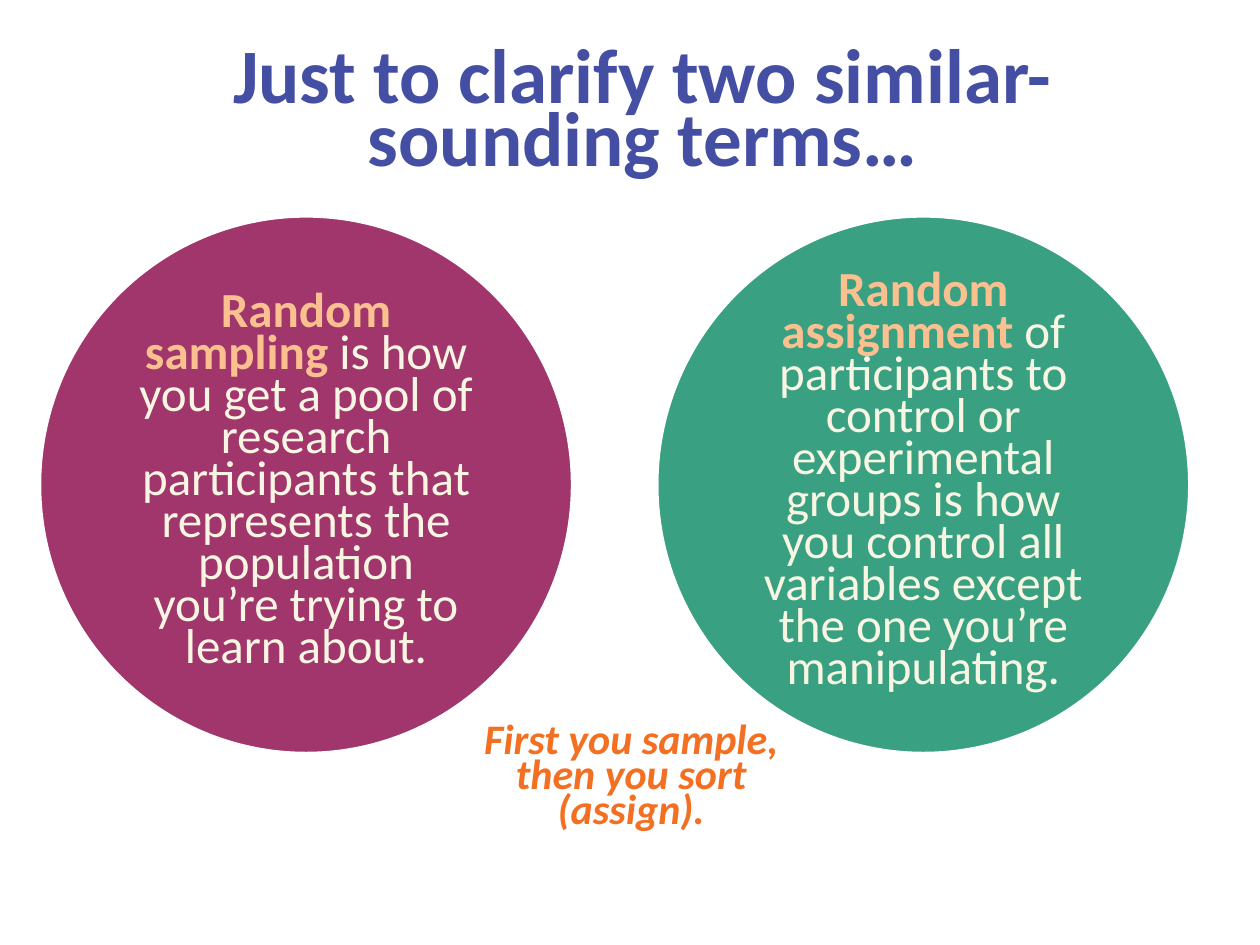
from pptx import Presentation
from pptx.dml.color import RGBColor
from pptx.enum import shapes, text
from pptx.util import Pt

COLORS = {
    "title": "444EA2",
    "summary": "F36F21",
    "term": "FAC090",
    "definition": "F8F6E3",
    "sampling": "A0366C",
    "assignment": "3AA082",
    "outline": "FFFFFF",
}


def rgb(name):
    return RGBColor.from_string(COLORS[name])


def style(paragraph, size, line_spacing):
    """Set what all the text on the slide shares: centring, font and leading."""
    paragraph.alignment = text.PP_ALIGN.CENTER
    paragraph.line_spacing = Pt(line_spacing)
    paragraph.font.name = "Calibri"
    paragraph.font.size = Pt(size)


prs = Presentation()
prs.slide_width, prs.slide_height = Pt(720), Pt(540)
slide = prs.slides.add_slide(prs.slide_layouts[5])

title = slide.shapes.title
title.left, title.top, title.width, title.height = Pt(69), Pt(23), Pt(597), Pt(90)
title.text_frame.text = "Just to clarify two similar-sounding terms…"
title.text_frame.vertical_anchor = text.MSO_ANCHOR.MIDDLE
heading = title.text_frame.paragraphs[0]
style(heading, 44, 36)
heading.font.bold = True
heading.font.color.rgb = rgb("title")

summary = slide.shapes.add_textbox(Pt(256.3), Pt(412.6), Pt(208.8), Pt(36.7))
summary.text_frame.word_wrap = True
summary.text_frame.text = "First you sample, then you sort (assign)."
advice = summary.text_frame.paragraphs[0]
style(advice, 24, 20)
advice.font.bold = advice.font.italic = True
advice.font.color.rgb = rgb("summary")

circles = [
    ("assignment", 375.3, "Random assignment ",
     "of participants to control or experimental groups is how you control all "
     "variables except the one you’re manipulating."),
    ("sampling", 22.6, "Random sampling ",
     "is how you get a pool of research participants that represents the "
     "population you’re trying to learn about."),
]
for fill, left, term, definition in circles:
    circle = slide.shapes.add_shape(
        shapes.MSO_SHAPE.OVAL, Pt(left), Pt(123.4), Pt(304.6), Pt(307.2))
    circle.shadow.inherit = False
    circle.fill.solid()
    circle.fill.fore_color.rgb = rgb(fill)
    circle.line.color.rgb = rgb("outline")
    circle.line.width = Pt(2)

    frame = circle.text_frame
    frame.word_wrap = True
    frame.vertical_anchor = text.MSO_ANCHOR.MIDDLE
    frame.margin_left = frame.margin_right = Pt(9.4)
    frame.margin_top = frame.margin_bottom = 0
    paragraph = frame.paragraphs[0]
    style(paragraph, 28, 24)
    for words, color, bold in ((term, "term", True), (definition, "definition", False)):
        run = paragraph.add_run()
        run.text = words
        run.font.bold = bold
        run.font.color.rgb = rgb(color)

prs.save("out.pptx")
